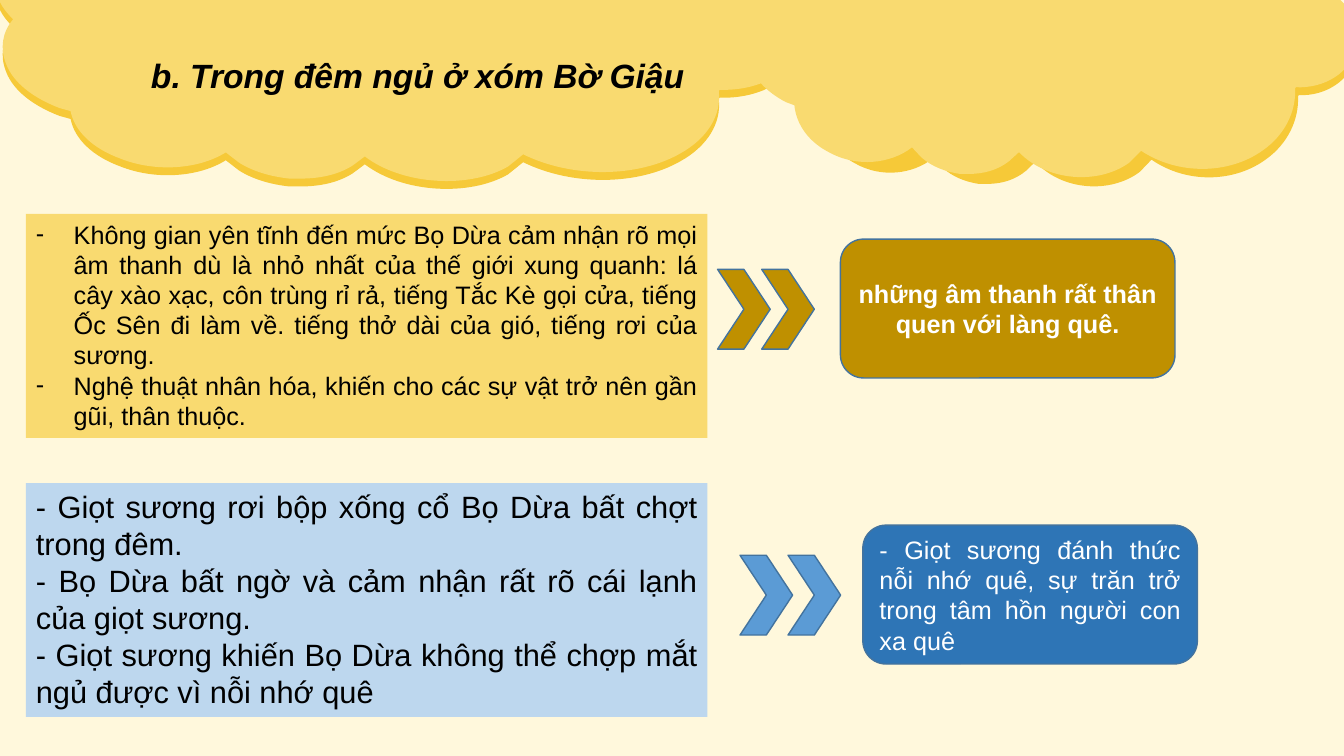
from lxml import etree
from pptx import Presentation
from pptx.dml.color import RGBColor
from pptx.enum.shapes import MSO_SHAPE
from pptx.enum.text import MSO_ANCHOR, PP_ALIGN
from pptx.oxml.ns import qn
from pptx.util import Pt

CREAM, YELLOW, AMBER, GOLD = "FFF8DC", "F9DA70", "F6C938", "BF9000"
PALE_BLUE, SKY, BLUE, OUTLINE = "BDD7EE", "5B9BD5", "2E75B6", "43739E"
BLACK, WHITE = "000000", "FFFFFF"

# Cloud outline in points: one pair is a straight step, three pairs a curve
CLOUD_START = (-2.9, 0.7)
CLOUD_STEPS = [
    [(545.8, 0.7)],
    [(543.6, 2.9)],
    [(562.3, 12.2), (572.4, 27.4), (568.1, 41.8)],
    [(563.8, 59), (540.7, 70.6), (514.1, 69.8)],
    [(513.4, 70.6)],
    [(515.5, 87.8), (505.4, 104.4), (486, 115.2)],
    [(455.8, 132.5), (409, 133.2), (373.7, 115.9)],
    [(362.9, 124.6)],
    [(335.5, 140.4), (288, 138.2), (260.6, 117.4)],
    [(252, 123.8)],
    [(241.9, 130.3), (229, 133.2), (214.6, 133.2)],
    [(206.6, 133.2)],
    [(193.7, 131.8), (180.7, 128.2), (170.6, 121.7)],
    [(161.3, 114.5)],
    [(141.8, 126.7), (110.9, 128.9), (85.7, 118.8)],
    [(66.2, 111.6), (53.3, 99.4), (50.4, 85)],
    [(42.5, 82.8)],
    [(23.8, 75.6), (9.4, 64.8), (4.3, 51.1)],
    [(0, 40.3), (1.4, 28.8), (9.4, 19.4)],
    [(5, 15.1), (2.2, 11.5), (0, 7.2)],
]

SOUNDS = [
    "Không gian yên tĩnh đến mức Bọ Dừa cảm nhận rõ mọi âm thanh dù là nhỏ nhất "
    "của thế giới xung quanh: lá cây xào xạc, côn trùng rỉ rả, tiếng Tắc Kè gọi "
    "cửa, tiếng Ốc Sên đi làm về. tiếng thở dài của gió, tiếng rơi của sương.",
    "Nghệ thuật nhân hóa, khiến cho các sự vật trở nên gần gũi, thân thuộc.",
]
DEWDROP = [
    "- Giọt sương rơi bộp xống cổ Bọ Dừa bất chợt trong đêm.",
    "- Bọ Dừa bất ngờ và cảm nhận rất rõ cái lạnh của giọt sương.",
    "- Giọt sương khiến Bọ Dừa không thể chợp mắt ngủ được vì nỗi nhớ quê",
]


def paint(fill, color):
    fill.solid()
    fill.fore_color.rgb = RGBColor.from_string(color)


def style(shape, color, outline=None):
    shape.shadow.inherit = False
    paint(shape.fill, color)
    if outline:
        paint(shape.line.fill, outline)
        shape.line.width = Pt(1)
    else:
        shape.line.fill.background()


def add_cloud(slide, color, scale, left, lean, drop, slope=0):
    """Draw the cloud outline stretched, leaned and moved into place."""
    def place(point):
        x, y = point
        return Pt(scale * x + left - lean * y), Pt(y - drop + slope * x)

    builder = slide.shapes.build_freeform(*place(CLOUD_START))
    builder.add_line_segments([place(p) for step in CLOUD_STEPS for p in step])
    cloud = builder.convert_to_shape()
    style(cloud, color)

    # Join each group of three segments into one curve
    segments = iter(list(cloud._element.iter(qn("a:lnTo"))))
    for step in CLOUD_STEPS:
        group = [next(segments) for _ in step]
        if len(group) == 3:
            curve = etree.Element(qn("a:cubicBezTo"))
            group[0].addprevious(curve)
            for segment in group:
                curve.append(segment[0])
                segment.getparent().remove(segment)


def add_dash(paragraph, indent):
    properties = paragraph._p.get_or_add_pPr()
    properties.set("marL", str(Pt(indent)))
    properties.set("indent", str(-Pt(indent)))
    etree.SubElement(properties, qn("a:buFont"), typeface="Arial")
    etree.SubElement(properties, qn("a:buChar"), char="-")


def write(shape, lines, size, color, align=PP_ALIGN.JUSTIFY, anchor=MSO_ANCHOR.TOP,
          bold=False, italic=False, dashed=False):
    frame = shape.text_frame
    frame.word_wrap = True
    frame.vertical_anchor = anchor
    frame.text = "\n".join(lines)
    for paragraph in frame.paragraphs:
        paragraph.alignment = align
        if dashed:
            add_dash(paragraph, 27)
        for run in paragraph.runs:
            run.font.name = "Arial"
            run.font.size = Pt(size)
            run.font.bold = bold
            run.font.italic = italic
            run.font.color.rgb = RGBColor.from_string(color)


def add_block(slide, kind, box, color, outline=None):
    block = slide.shapes.add_shape(kind, *map(Pt, box))
    style(block, color, outline)
    return block


def add_chevrons(slide, left, top, step, color):
    for i in range(2):
        box = (left + i * step, top, 37.6, 57)
        add_block(slide, MSO_SHAPE.CHEVRON, box, color, OUTLINE)


def add_notes_panel(slide, top, height, color, lines, size, dashed=False):
    panel = add_block(slide, MSO_SHAPE.RECTANGLE, (18.6, top, 486.7, height), color)
    write(panel, lines, size, BLACK, dashed=dashed)


def add_conclusion(slide, left, top, color, line, align, bold=False):
    box = (left, top, 239, 99.2)
    conclusion = add_block(slide, MSO_SHAPE.ROUNDED_RECTANGLE, box, color, OUTLINE)
    write(conclusion, [line], 18, WHITE, align, MSO_ANCHOR.MIDDLE, bold)


def add_heading(slide, line):
    heading = slide.shapes.add_textbox(Pt(100.8), Pt(21.6), Pt(515.5), Pt(45.4))
    write(heading, [line], 24, BLACK, bold=True, italic=True)
    heading.text_frame.paragraphs[0].line_spacing = 1.5


def main():
    deck = Presentation()
    deck.slide_width, deck.slide_height = Pt(960), Pt(540)
    slide = deck.slides.add_slide(deck.slide_layouts[6])
    paint(slide.background.fill, CREAM)

    # Clouds along the top, each with a darker one behind it
    add_cloud(slide, AMBER, 1, 0, 0, 0)
    add_cloud(slide, YELLOW, 1, 0, 0, 5.6)
    add_cloud(slide, AMBER, 0.733, 554.4, 0.05, 1.8)
    add_cloud(slide, YELLOW, 0.771, 532.8, 0.05, 10, 0.005)

    # Sounds of the night
    add_notes_panel(slide, 152.8, 160, YELLOW, SOUNDS, 18, dashed=True)
    add_chevrons(slide, 512.6, 192.4, 31.5, GOLD)
    add_conclusion(slide, 600.3, 170.8, GOLD,
                   "những âm thanh rất thân quen với làng quê.",
                   PP_ALIGN.CENTER, bold=True)

    # The dewdrop
    add_notes_panel(slide, 345, 167, PALE_BLUE, DEWDROP, 22)
    add_chevrons(slide, 528.6, 396.6, 34.3, SKY)
    add_conclusion(slide, 616.3, 375.1, BLUE,
                   "- Giọt sương đánh thức nỗi nhớ quê, sự trăn trở trong tâm hồn "
                   "người con xa quê", PP_ALIGN.JUSTIFY)

    add_heading(slide, "b. Trong đêm ngủ ở xóm Bờ Giậu")
    deck.save("out.pptx")


if __name__ == "__main__":
    main()
